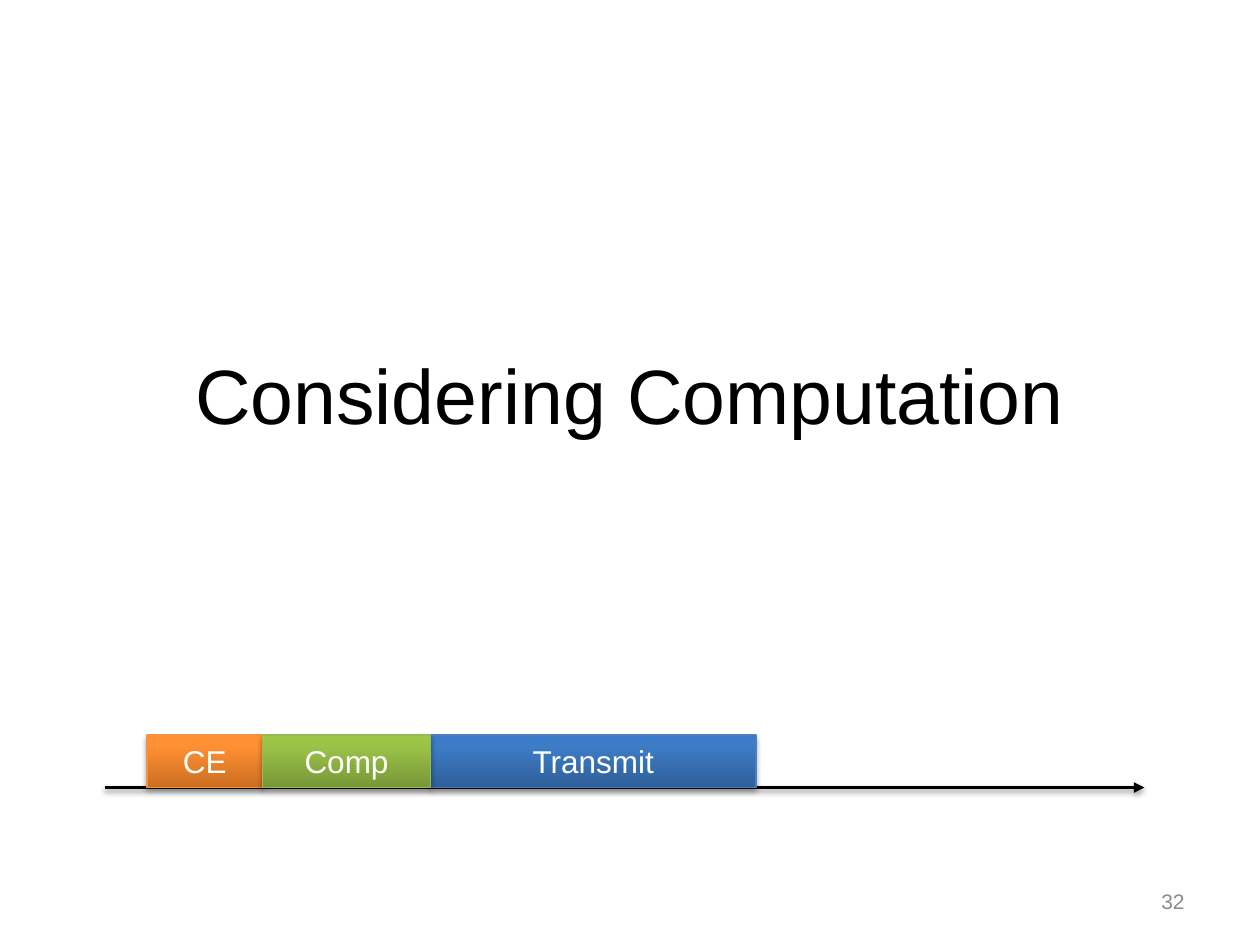
from copy import deepcopy

from lxml.etree import SubElement
from pptx import Presentation
from pptx.dml.color import RGBColor
from pptx.enum.shapes import MSO_CONNECTOR, MSO_SHAPE
from pptx.enum.text import MSO_ANCHOR, PP_ALIGN
from pptx.oxml.ns import qn
from pptx.util import Pt

color = RGBColor.from_string


def write(shape, text, size, ink, align):
    frame = shape.text_frame
    frame.word_wrap = True
    frame.vertical_anchor = MSO_ANCHOR.MIDDLE
    para = frame.paragraphs[0]
    para.alignment = align
    span = para.add_run()
    span.text = text
    for name, value in {"name": "Arial", "size": Pt(size)}.items():
        setattr(span.font, name, value)
    span.font.color.rgb = color(ink)


def add_shadow(shape, distance, opacity):
    effects = SubElement(shape._element.spPr, qn("a:effectLst"))
    shadow = SubElement(effects, qn("a:outerShdw"), blurRad=str(Pt(3.1)),
                        dist=str(Pt(distance)), dir="5400000", rotWithShape="0")
    black = SubElement(shadow, qn("a:srgbClr"), val="000000")
    SubElement(black, qn("a:alpha"), val=str(opacity * 1000))


deck = Presentation()
deck.slide_width, deck.slide_height = Pt(720), Pt(540)
page = deck.slides.add_slide(deck.slide_layouts[5])

# Title
title = page.shapes.title
place = {"left": 36, "top": 180, "width": 648, "height": 90}
for name, value in place.items():
    setattr(title, name, Pt(value))
write(title, "Considering Computation", 44, "000000", PP_ALIGN.CENTER)

# Slide number
number = page.shapes.add_textbox(Pt(516), Pt(500.5), Pt(168), Pt(28.75))
write(number, "32", 12, "8C8C8C", PP_ALIGN.RIGHT)

# Time axis
axis_y = 450
axis = page.shapes.add_connector(MSO_CONNECTOR.STRAIGHT,
                                 Pt(60), Pt(axis_y), Pt(654), Pt(axis_y))
axis.line.width = Pt(2)
axis.line.color.rgb = color("000000")
SubElement(axis.line._get_or_add_ln(), qn("a:tailEnd"), type="triangle")
add_shadow(axis, 1.6, 38)

# Phases, end to end on the axis: label, left, right, gradient, outline
phase_height = 30
phases = [
    ("CE", 84, 150, ("CC6E20", "FF9034", "FF9136"), "F69240"),
    ("Transmit", 246, 432, ("2F5F99", "3D7CC7", "3A7CCB"), "4B7EBC"),
    ("Comp", 150, 246, ("779737", "9BC348", "9DC746"), "98B955"),
]
for label, left, right, shades, outline in phases:
    box = page.shapes.add_shape(MSO_SHAPE.RECTANGLE, Pt(left), Pt(axis_y - phase_height),
                                Pt(right - left), Pt(phase_height))
    box.fill.gradient()
    box.fill.gradient_angle = 90
    stop_list = box._element.spPr.find(".//" + qn("a:gsLst"))
    stop_list.append(deepcopy(stop_list[-1]))
    for stop, position, shade in zip(box.fill.gradient_stops, (0, 0.8, 1), shades):
        stop.position = position
        stop.color.rgb = color(shade)
    box.line.width = Pt(0.75)
    box.line.color.rgb = color(outline)
    add_shadow(box, 1.8, 35)
    write(box, label, 18, "FFFFFF", PP_ALIGN.CENTER)

deck.save("out.pptx")
